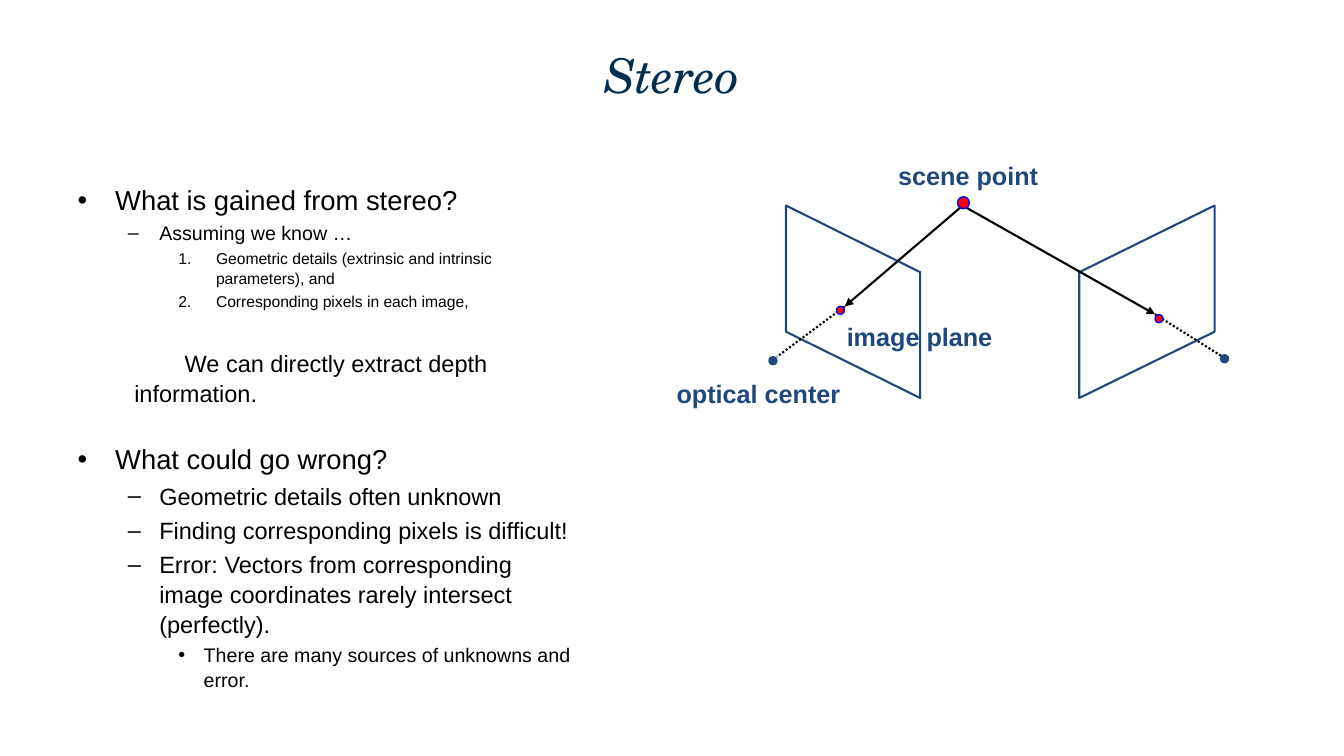
from dataclasses import dataclass

from lxml import etree
from pptx import Presentation
from pptx import util as u
from pptx.dml.color import RGBColor
from pptx.enum import dml, shapes, text
from pptx.oxml import ns


@dataclass(frozen=True)
class Theme:
    title_font: str = "TeX Gyre Schola"
    body_font: str = "Arial"
    title_color: RGBColor = RGBColor(0x00, 0x2D, 0x50)
    blue: RGBColor = RGBColor(0x1F, 0x49, 0x7D)
    black: RGBColor = RGBColor(0, 0, 0)
    red: RGBColor = RGBColor(0xFF, 0, 0)
    outline: RGBColor = RGBColor(0, 0, 0xFF)
    title_size: float = 34.2
    question: float = 19.6
    point: float = 16.8
    detail: float = 14
    item: float = 11.2
    label: float = 18


theme = Theme()


def style_font(font, size, color, name=theme.body_font):
    font.name, font.size = name, u.Pt(size)
    font.color.rgb = color


def add_child(parent, tag, **attributes):
    return etree.SubElement(parent, ns.qn(tag), attributes)


deck = Presentation()
deck.slide_width, deck.slide_height = u.Cm(33.87), u.Cm(19.05)
page = deck.slides.add_slide(deck.slide_layouts[1])

# Title
title = page.shapes.title
title.left, title.top, title.width, title.height = map(u.Cm, (1.7, 0.97, 30.48, 1.83))
title.text_frame.text = "Stereo"
title.text_frame.auto_size = text.MSO_AUTO_SIZE.NONE
title.text_frame.vertical_anchor = text.MSO_ANCHOR.MIDDLE
para = title.text_frame.paragraphs[0]
para.alignment = text.PP_ALIGN.CENTER
style_font(para.font, theme.title_size, theme.title_color, theme.title_font)
para.font.italic = True

# Image planes, mirrored about the scene
for outer, inner in ((19.81, 23.19), (30.61, 27.2)):
    corners = [(outer, 5.18), (outer, 8.36), (inner, 10.03), (inner, 6.86)]
    corners = [(u.Cm(x), u.Cm(y)) for x, y in corners]
    builder = page.shapes.build_freeform(*corners[0])
    builder.add_line_segments(corners[1:], close=True)
    plane = builder.convert_to_shape()
    plane.shadow.inherit = False
    plane.fill.background()
    plane.line.color.rgb = theme.blue
    plane.line.width = u.Pt(1.5)

# Rays: arrows from the scene point, dotted on to each optical center
scene = (24.26, 5.18)
for pixel, center in (((21.29, 7.72), (19.58, 8.99)), ((29.11, 7.92), (30.81, 8.99))):
    for start, end, dotted in ((scene, pixel, False), (pixel, center, True)):
        ray = page.shapes.add_connector(
            shapes.MSO_CONNECTOR.STRAIGHT, *map(u.Cm, start + end))
        ray.line.color.rgb = theme.black
        ray.line.width = u.Pt(1.5)
        if dotted:
            ray.line.dash_style = dml.MSO_LINE.ROUND_DOT
        else:
            add_child(ray.line._get_or_add_ln(), "a:tailEnd", type="triangle")
        add_child(ray._element.spPr, "a:effectLst")

# Dots: center x, center y, diameter, fill, outline
dots = [
    (19.48, 9.09, 0.2, theme.blue, theme.blue),
    (30.86, 9.04, 0.2, theme.blue, theme.blue),
    (21.18, 7.82, 0.2, theme.red, theme.outline),
    (29.21, 8.03, 0.2, theme.red, theme.outline),
    (24.28, 5.11, 0.3, theme.red, theme.outline),
]
for x, y, size, fill, outline in dots:
    dot = page.shapes.add_shape(
        shapes.MSO_SHAPE.OVAL, *map(u.Cm, (x - size / 2, y - size / 2, size, size)))
    dot.shadow.inherit = False
    dot.fill.solid()
    dot.fill.fore_color.rgb = fill
    dot.line.color.rgb = outline
    dot.line.width = u.Pt(1)

# Diagram labels
labels = [
    ("scene point", 22.38, 3.91, 4.04),
    ("optical center", 16.79, 9.4, 4.65),
    ("image plane", 21.08, 7.98, 4.19),
]
for wording, left, top, width in labels:
    box = page.shapes.add_textbox(*map(u.Cm, (left, top, width, 1.02)))
    frame = box.text_frame
    frame.text = wording
    frame.word_wrap = False
    frame.auto_size = text.MSO_AUTO_SIZE.SHAPE_TO_FIT_TEXT
    frame.vertical_anchor = text.MSO_ANCHOR.MIDDLE
    para = frame.paragraphs[0]
    para.alignment = text.PP_ALIGN.CENTER
    style_font(para.font, theme.label, theme.blue)
    para.font.bold = True

# Body styles: level, left margin, first-line indent, bullet, size
question = (0, 0.95, -0.95, "•", theme.question)
assumption = (1, 2.06, -0.79, "–", theme.detail)
numbered = (2, 3.49, -0.95, "1.", theme.item)
conclusion = (1, 1.43, 1.27, None, theme.point)
problem = (1, 2.06, -0.79, "–", theme.point)
remark = (2, 3.18, -0.64, "•", theme.detail)

# Body lines: wording, style, space before where it opens a new group
lines = [
    ("What is gained from stereo?", question, 0),
    ("Assuming we know …", assumption, None),
    ("Geometric details (extrinsic and intrinsic parameters), and", numbered, None),
    ("Corresponding pixels in each image,", numbered, None),
    ("We can directly extract depth information.", conclusion, 27),
    ("What could go wrong?", question, 24),
    ("Geometric details often unknown", problem, None),
    ("Finding corresponding pixels is difficult!", problem, None),
    ("Error: Vectors from corresponding image coordinates rarely intersect (perfectly).",
     problem, None),
    ("There are many sources of unknowns and error.", remark, None),
]
body = page.placeholders[1]
body.left, body.top, body.width, body.height = map(u.Cm, (1.7, 4.45, 13.03, 11.38))
frame = body.text_frame
frame.auto_size = text.MSO_AUTO_SIZE.NONE
frame.vertical_anchor = text.MSO_ANCHOR.TOP
frame.text = "\n".join(wording for wording, _, _ in lines)
for para, (_, style, gap) in zip(frame.paragraphs, lines):
    level, margin, indent, bullet, size = style
    para.level = level
    properties = para._p.get_or_add_pPr()
    properties.set("marL", str(u.Cm(margin)))
    properties.set("indent", str(u.Cm(indent)))
    if bullet is None:
        add_child(properties, "a:buNone")
    else:
        add_child(properties, "a:buFont", typeface=theme.body_font)
        if bullet == "1.":
            add_child(properties, "a:buAutoNum", type="arabicPeriod")
        else:
            add_child(properties, "a:buChar", char=bullet)
    para.line_spacing = 1.05
    para.space_before = u.Pt(size * 0.2 if gap is None else gap)
    style_font(para.font, size, theme.black)

deck.save("out.pptx")
